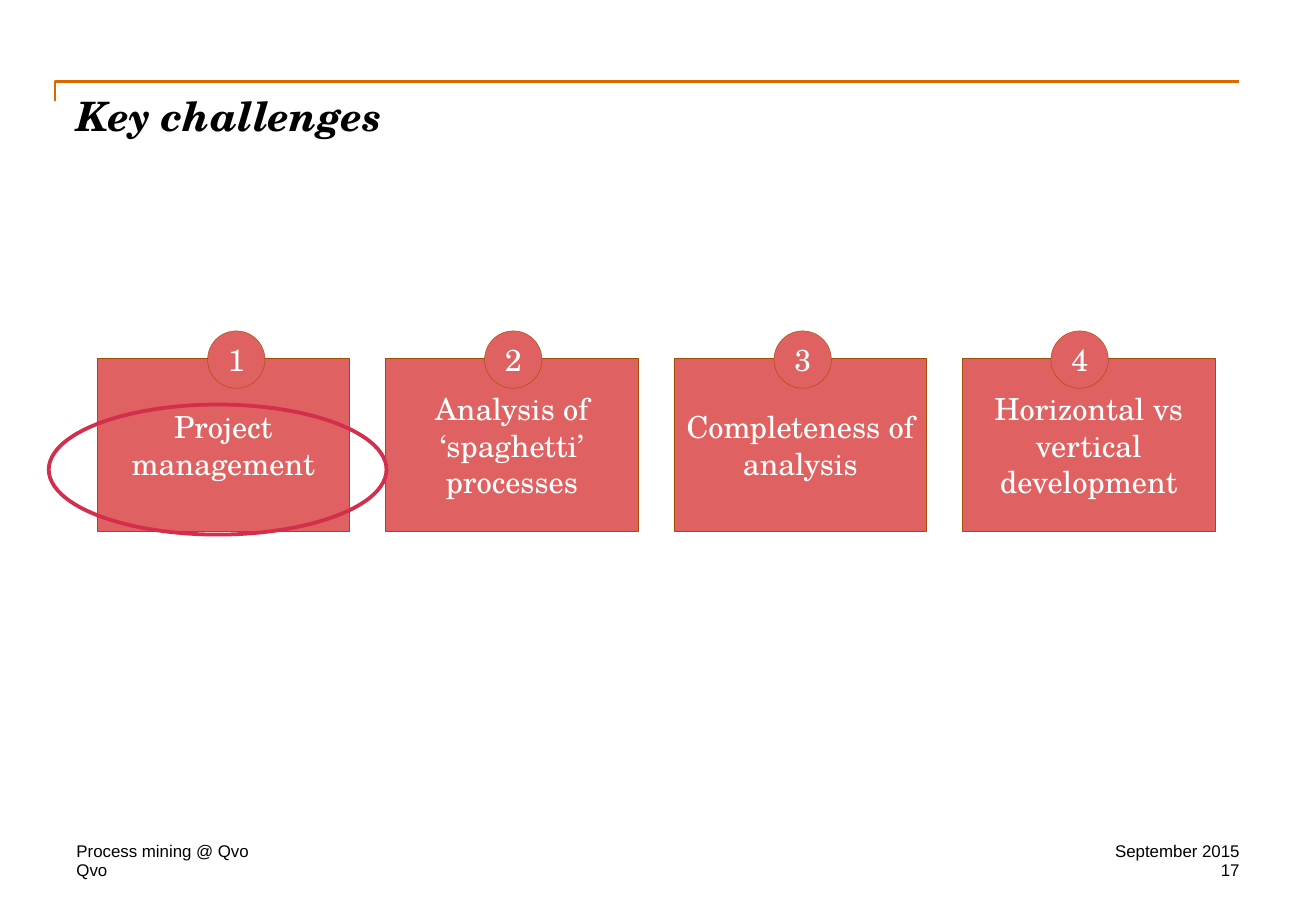
from dataclasses import dataclass

from pptx import Presentation
from pptx.dml.color import RGBColor
from pptx.enum.shapes import MSO_SHAPE
from pptx.enum.text import MSO_ANCHOR, PP_ALIGN
from pptx.util import Cm, Pt

RECTANGLE, OVAL = MSO_SHAPE.RECTANGLE, MSO_SHAPE.OVAL
TOP, MIDDLE, BOTTOM = MSO_ANCHOR.TOP, MSO_ANCHOR.MIDDLE, MSO_ANCHOR.BOTTOM
LEFT, CENTER, RIGHT = PP_ALIGN.LEFT, PP_ALIGN.CENTER, PP_ALIGN.RIGHT


@dataclass(frozen=True)
class Theme:
    black: RGBColor = RGBColor.from_string("000000")
    white: RGBColor = RGBColor.from_string("FFFFFF")
    coral: RGBColor = RGBColor.from_string("E06161")
    brown: RGBColor = RGBColor.from_string("A34E00")
    orange: RGBColor = RGBColor.from_string("DC6900")
    crimson: RGBColor = RGBColor.from_string("D32E4B")
    serif: str = "TeX Gyre Schola"
    sans: str = "Arial"
    title_size: Pt = Pt(24)
    body_size: Pt = Pt(18)
    footer_size: Pt = Pt(10)


THEME = Theme()
TITLE_FONT = {"name": THEME.serif, "size": THEME.title_size, "bold": True, "italic": True}
BODY_FONT = {"name": THEME.serif, "size": THEME.body_size}
FOOTER_FONT = {"name": THEME.sans, "size": THEME.footer_size}

BOX_LEFT, BOX_TOP, BOX_PITCH = 2.03, 7.5, 6.03
BOX_WIDTH, BOX_HEIGHT = 5.28, 3.61
BADGE_TOP, BADGE_SIZE = 6.92, 1.2

# Box text and left edge of its number badge in cm
CHALLENGES = [
    ("Project management", 4.34),
    ("Analysis of ‘spaghetti’\nprocesses", 10.13),
    ("Completeness of analysis", 16.18),
    ("Horizontal vs vertical development", 21.97),
]

# Text, position in cm, alignment, anchor
FOOTERS = [
    ("Process mining @ Qvo", (1.6, 17.57, 15.82, 0.43), LEFT, BOTTOM),
    ("Qvo", (1.6, 17.98, 7.8, 0.43), LEFT, TOP),
    ("September 2015", (21.33, 17.58, 4.58, 0.43), RIGHT, TOP),
    ("17", (21.33, 17.98, 4.58, 0.43), RIGHT, TOP),
]


def lengths(position):
    return [Cm(value) for value in position]


def write_text(text_frame, text, font, color, alignment):
    text_frame.word_wrap = True
    text_frame.text = text
    for paragraph in text_frame.paragraphs:
        paragraph.alignment = alignment
        for name, value in font.items():
            setattr(paragraph.font, name, value)
        paragraph.font.color.rgb = color


def add_label(slide, text, position, font, alignment=LEFT, anchor=TOP):
    """Add a text box without inner margins."""
    text_frame = slide.shapes.add_textbox(*lengths(position)).text_frame
    for side in ("left", "top", "right", "bottom"):
        setattr(text_frame, f"margin_{side}", 0)
    text_frame.vertical_anchor = anchor
    write_text(text_frame, text, font, THEME.black, alignment)


def style_outline(shape, color, width):
    shape.shadow.inherit = False
    shape.line.color.rgb = color
    shape.line.width = Pt(width)


def add_filled_shape(slide, kind, text, position):
    shape = slide.shapes.add_shape(kind, *lengths(position))
    style_outline(shape, THEME.brown, 0.25)
    shape.fill.solid()
    shape.fill.fore_color.rgb = THEME.coral
    shape.text_frame.vertical_anchor = MIDDLE
    write_text(shape.text_frame, text, BODY_FONT, THEME.white, CENTER)


def add_title_rule(slide):
    """Add the long rule above the title with its short drop at the left."""
    builder = slide.shapes.build_freeform(Cm(1.15), Cm(2.12))
    builder.add_line_segments([(Cm(1.15), Cm(1.7)), (Cm(25.91), Cm(1.7))], close=False)
    rule = builder.convert_to_shape()
    rule.fill.background()
    style_outline(rule, THEME.orange, 1.5)


def add_highlight_ring(slide):
    ring = slide.shapes.add_shape(OVAL, *lengths((1.02, 8.46, 7.06, 2.72)))
    ring.fill.background()
    style_outline(ring, THEME.crimson, 2.25)


def add_challenges(slide):
    for index, (text, badge_left) in enumerate(CHALLENGES):
        box_left = BOX_LEFT + index * BOX_PITCH
        add_filled_shape(slide, RECTANGLE, text, (box_left, BOX_TOP, BOX_WIDTH, BOX_HEIGHT))
        add_filled_shape(slide, OVAL, str(index + 1),
                         (badge_left, BADGE_TOP, BADGE_SIZE, BADGE_SIZE))


def main():
    presentation = Presentation()
    presentation.slide_width, presentation.slide_height = Cm(27.51), Cm(19.05)
    slide = presentation.slides.add_slide(presentation.slide_layouts[6])

    add_title_rule(slide)
    add_label(slide, "Key challenges", (1.6, 1.9, 24.31, 2.54), TITLE_FONT)
    for text, position, alignment, anchor in FOOTERS:
        add_label(slide, text, position, FOOTER_FONT, alignment, anchor)
    add_challenges(slide)
    add_highlight_ring(slide)

    presentation.save("out.pptx")


if __name__ == "__main__":
    main()
